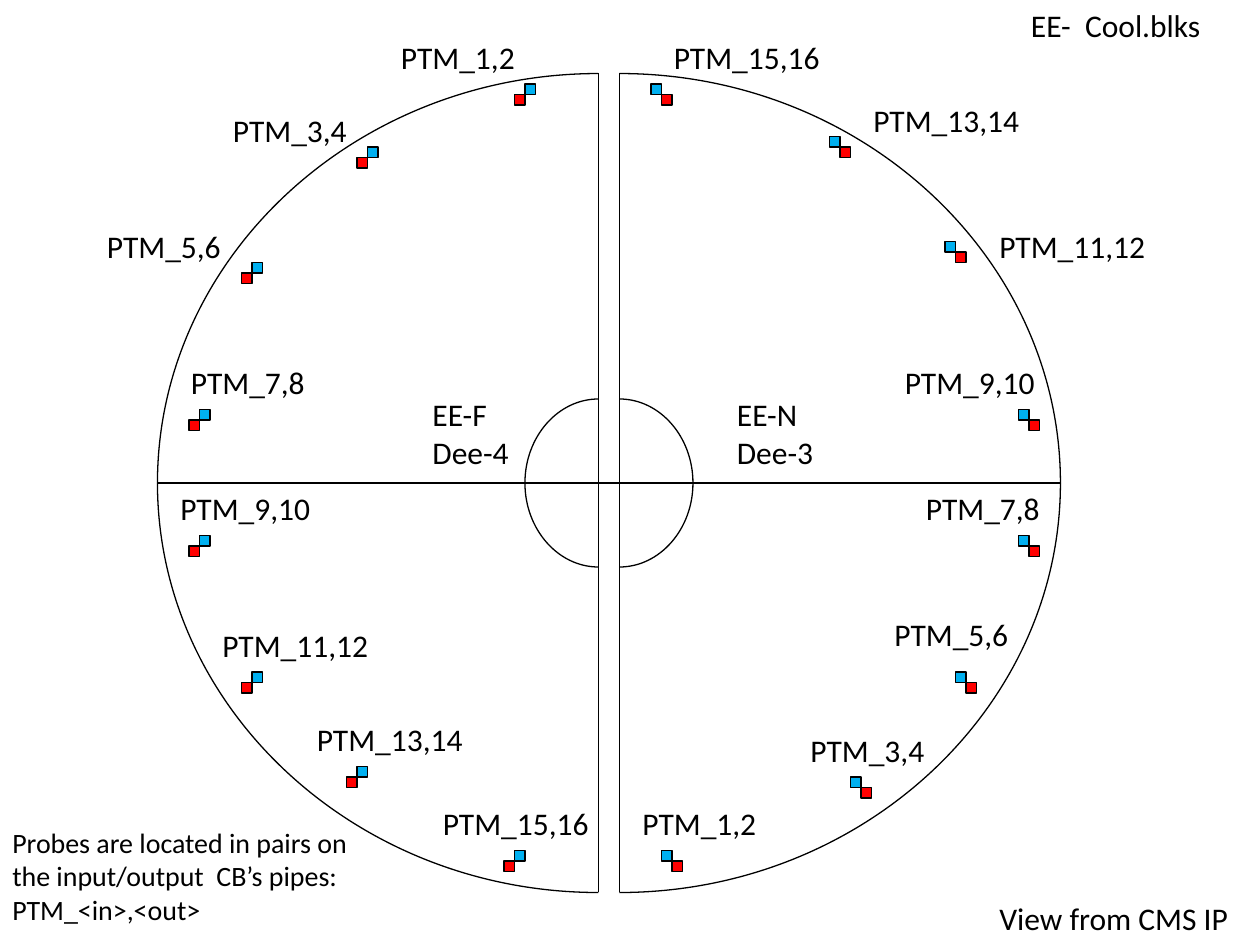
from dataclasses import dataclass

from lxml import etree
from pptx import Presentation
from pptx.dml.color import RGBColor
from pptx.enum.shapes import MSO_CONNECTOR, MSO_SHAPE
from pptx.enum.text import MSO_AUTO_SIZE
from pptx.oxml.ns import qn
from pptx.util import Inches, Pt

RECT = MSO_SHAPE.RECTANGLE
STRAIGHT = MSO_CONNECTOR.STRAIGHT
FIT_TEXT = MSO_AUTO_SIZE.SHAPE_TO_FIT_TEXT

BLACK = RGBColor(0x00, 0x00, 0x00)
RED = RGBColor(0xFF, 0x00, 0x00)
BLUE = RGBColor(0x00, 0xB0, 0xF0)

FONT = "Calibri"
LINE_WIDTH = Pt(0.75)
GRID_PER_INCH = 12
BEZIER_ARC = 0.55
MID_Y = 46
OUTER = (42, 39)
INNER = (7, 8)


@dataclass(frozen=True)
class Probe:
    channels: str
    label_x: int
    label_y: int
    x: int
    y: int


@dataclass(frozen=True)
class Dee:
    edge_x: int
    side: int
    axis_from: int
    axis_to: int
    probes: tuple[Probe, ...]


@dataclass(frozen=True)
class Note:
    text: str
    x: int
    y: int
    width: float
    height: float = 0.4
    size: int = 18


DEES = (
    Dee(57, -1, 15, 67, (
        Probe("1,2", 37, 3, 50, 8),
        Probe("3,4", 21, 10, 35, 14),
        Probe("5,6", 9, 21, 24, 25),
        Probe("7,8", 17, 34, 19, 39),
        Probe("9,10", 16, 46, 19, 51),
        Probe("11,12", 20, 59, 24, 64),
        Probe("13,14", 29, 68, 34, 73),
        Probe("15,16", 41, 76, 49, 81),
    )),
    Dee(59, 1, 101, 49, (
        Probe("15,16", 63, 3, 62, 8),
        Probe("13,14", 82, 9, 79, 13),
        Probe("11,12", 94, 21, 90, 23),
        Probe("9,10", 85, 34, 97, 39),
        Probe("7,8", 87, 46, 97, 51),
        Probe("5,6", 84, 58, 91, 64),
        Probe("3,4", 76, 69, 81, 74),
        Probe("1,2", 60, 76, 63, 81),
    )),
)

NOTES = (
    Note("EE-N\nDee-3", 69, 37, 0.82, 0.71),
    Note("EE-F\nDee-4", 40, 37, 0.82, 0.71),
    Note("View from CMS IP", 94, 85, 2.04),
    Note("EE-  Cool.blks", 97, 0, 1.61),
    Note("Probes are located in pairs on\nthe input/output  CB’s pipes:\nPTM_<in>,<out>",
         0, 78, 2.94, 0.91, 16),
)


def grid(n: float) -> Inches:
    return Inches(n / GRID_PER_INCH)


def add_text(shapes, text: str, *, x: int, y: int, width: float,
             height: float = 0.4, size: int = 18) -> None:
    tb = shapes.add_textbox(grid(x), grid(y), Inches(width), Inches(height))
    tf = tb.text_frame
    tf.word_wrap = False
    tf.auto_size = FIT_TEXT
    tf.text = text
    for p in tf.paragraphs:
        for r in p.runs:
            r.font.name = FONT
            r.font.size = Pt(size)
            r.font.color.rgb = BLACK


def style_line(line) -> None:
    line.color.rgb = BLACK
    line.width = LINE_WIDTH


def add_line(shapes, x1: int, y1: int, x2: int, y2: int) -> None:
    c = shapes.add_connector(STRAIGHT, grid(x1), grid(y1), grid(x2), grid(y2))
    style_line(c.line)
    etree.SubElement(c._element.spPr, qn("a:effectLst"))


def add_quarter_arc(shapes, x: int, radii: tuple[int, int], side: int, half: int) -> None:
    rx, ry = side * radii[0], half * radii[1]
    fb = shapes.build_freeform(grid(x), grid(MID_Y + ry))
    fb.add_line_segments([
        (grid(x + BEZIER_ARC * rx), grid(MID_Y + ry)),
        (grid(x + rx), grid(MID_Y + BEZIER_ARC * ry)),
        (grid(x + rx), grid(MID_Y)),
    ], close=False)
    sp = fb.convert_to_shape()
    outline = next(sp._element.iter(qn("a:path")))
    segments = outline.findall(qn("a:lnTo"))
    curve = etree.SubElement(outline, qn("a:cubicBezTo"))
    for segment in segments:
        curve.append(segment[0])
        outline.remove(segment)
    sp.shadow.inherit = False
    sp.fill.background()
    style_line(sp.line)


def add_marker(shapes, x: int, y: int, color: RGBColor) -> None:
    sp = shapes.add_shape(RECT, grid(x), grid(y), grid(1), grid(1))
    sp.shadow.inherit = False
    sp.fill.solid()
    sp.fill.fore_color.rgb = color
    style_line(sp.line)


def add_probe(shapes, probe: Probe, side: int) -> None:
    label = f"PTM_{probe.channels}"
    add_marker(shapes, probe.x + side, probe.y + 1, RED)
    add_marker(shapes, probe.x, probe.y, BLUE)
    add_text(shapes, label, x=probe.label_x, y=probe.label_y,
             width=0.2 + 0.13 * len(label))


def add_dee(shapes, dee: Dee) -> None:
    add_line(shapes, dee.axis_from, MID_Y, dee.axis_to, MID_Y)
    outline = shapes.add_group_shape().shapes
    for radii in (OUTER, INNER):
        for half in (-1, 1):
            add_quarter_arc(outline, dee.edge_x, radii, dee.side, half)
    add_line(outline, dee.edge_x, MID_Y - OUTER[1], dee.edge_x, MID_Y + OUTER[1])
    for probe in dee.probes:
        add_probe(shapes, probe, dee.side)


def main() -> None:
    prs = Presentation()
    prs.slide_width = Inches(10)
    prs.slide_height = Inches(7.5)
    s = prs.slides.add_slide(prs.slide_layouts[6])
    for dee in DEES:
        add_dee(s.shapes, dee)
    for note in NOTES:
        add_text(s.shapes, note.text, x=note.x, y=note.y, width=note.width,
                 height=note.height, size=note.size)
    prs.save("out.pptx")


if __name__ == "__main__":
    main()
